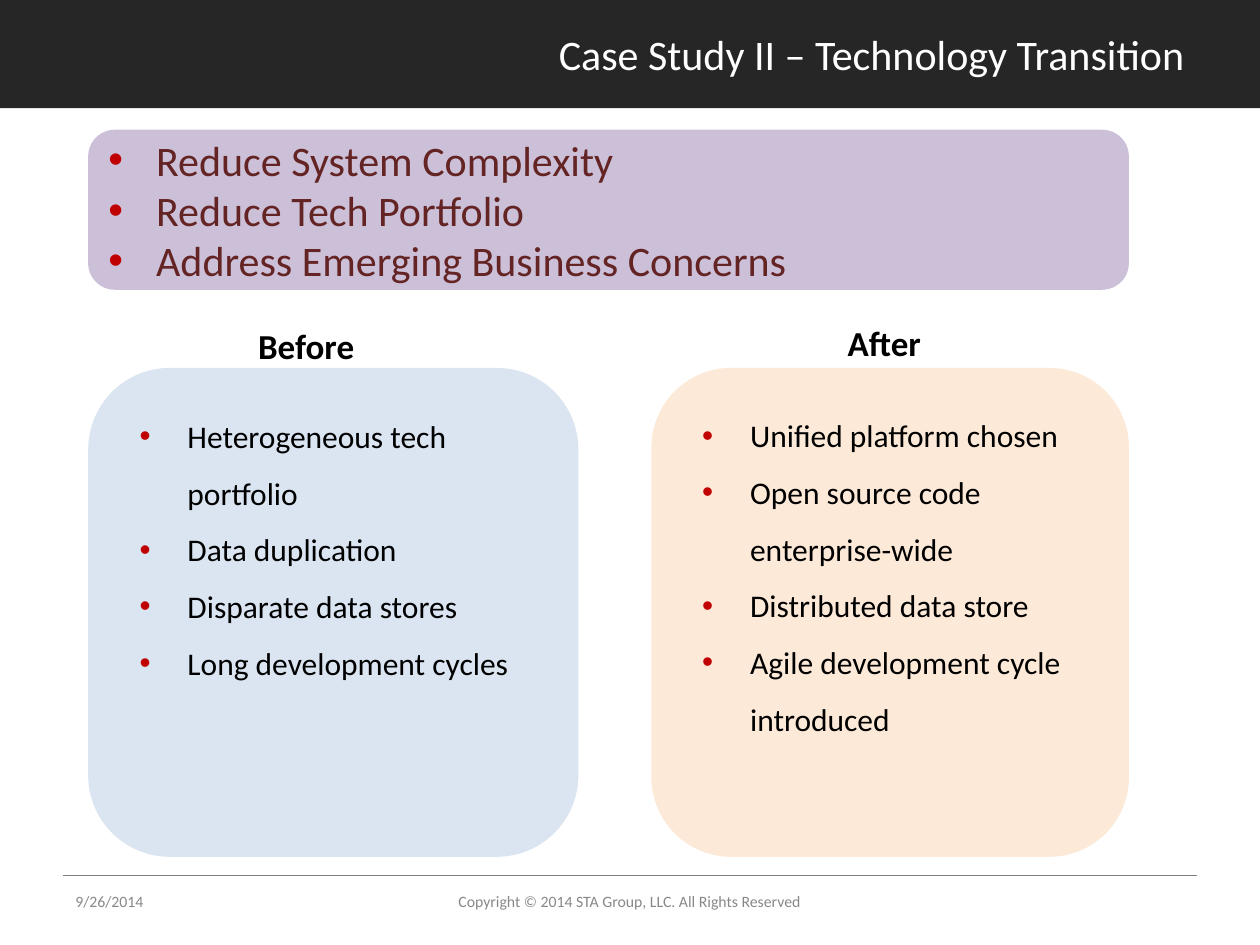
from lxml.etree import SubElement
from pptx import Presentation
from pptx.dml.color import RGBColor
from pptx.enum.shapes import MSO_CONNECTOR, MSO_SHAPE
from pptx.enum.text import MSO_ANCHOR, PP_ALIGN
from pptx.oxml.ns import qn
from pptx.util import Inches, Pt

COLORS = {
    "header": "262626", "rule": "7F7F7F", "footer": "888888",
    "white": "FFFFFF", "black": "000000", "bullet": "C00000",
    "goals": "CCC0D9", "goals_text": "632423",
    "before": "DAE5F1", "after": "FDE9D8",
}
GOALS = ["Reduce System Complexity", "Reduce Tech Portfolio",
         "Address Emerging Business Concerns"]
BEFORE = ["Heterogeneous tech portfolio", "Data duplication",
          "Disparate data stores", "Long development cycles"]
AFTER = ["Unified platform chosen", "Open source code enterprise-wide",
         "Distributed data store", "Agile development cycle introduced"]


def rgb(name):
    return RGBColor.from_string(COLORS[name])


def add_bullet(p, indent):
    pPr = p._p.get_or_add_pPr()
    pPr.set("marL", str(Inches(indent)))
    pPr.set("indent", str(-Inches(0.38)))
    color = SubElement(pPr, qn("a:buClr"))
    SubElement(color, qn("a:srgbClr")).set("val", COLORS["bullet"])
    SubElement(pPr, qn("a:buFont")).set("typeface", "Arial")
    SubElement(pPr, qn("a:buChar")).set("char", "•")


def write(sp, lines, size=18, color="black", bold=False, align=PP_ALIGN.LEFT,
          anchor=MSO_ANCHOR.TOP, indent=None, spacing=None):
    tf = sp.text_frame
    tf.word_wrap = True
    tf.vertical_anchor = anchor
    for i, line in enumerate(lines):
        p = tf.add_paragraph() if i else tf.paragraphs[0]
        if indent is not None:
            add_bullet(p, indent)
        p.alignment = align
        if spacing:
            p.line_spacing = spacing
        r = p.add_run()
        r.text = line
        r.font.name = "Calibri"
        r.font.size = Pt(size)
        r.font.bold = bold
        r.font.color.rgb = rgb(color)


def add_box(s, kind, at, fill):
    sp = s.shapes.add_shape(kind, *map(Inches, at))
    sp.shadow.inherit = False
    sp.fill.solid()
    sp.fill.fore_color.rgb = rgb(fill)
    sp.line.fill.background()
    return sp


def add_label(s, at, text, **fmt):
    write(s.shapes.add_textbox(*map(Inches, at)), [text], **fmt)


def add_panel(s, at, fill, lines, **fmt):
    write(add_box(s, MSO_SHAPE.ROUNDED_RECTANGLE, at, fill), lines, **fmt)


def add_header(s, text):
    title = s.shapes.title
    bar = add_box(s, MSO_SHAPE.RECTANGLE, (0, 0, 10.01, 0.86), "header")
    title.element.addprevious(bar.element)
    title.left, title.top, title.width, title.height = map(
        Inches, (1.97, 0, 7.53, 0.86))
    write(title, [text], size=24, color="white", align=PP_ALIGN.RIGHT,
          anchor=MSO_ANCHOR.MIDDLE)


def add_footer(s):
    y = 6.95
    rule = s.shapes.add_connector(
        MSO_CONNECTOR.STRAIGHT, *map(Inches, (0.5, y, 9.5, y)))
    rule.line.color.rgb = rgb("rule")
    rule.line.width = Pt(0.75)
    SubElement(rule.element.spPr, qn("a:effectLst"))
    fmt = {"size": 9, "color": "footer", "anchor": MSO_ANCHOR.MIDDLE}
    add_label(s, (0.5, y, 2.33, 0.4), "9/26/2014", **fmt)
    add_label(s, (2.83, y, 4.33, 0.4),
              "Copyright © 2014 STA Group, LLC. All Rights Reserved",
              align=PP_ALIGN.CENTER, **fmt)


def main():
    prs = Presentation()
    prs.slide_width, prs.slide_height = Inches(10), Inches(7.5)
    s = prs.slides.add_slide(prs.slide_layouts[5])
    add_header(s, "Case Study II – Technology Transition")
    add_footer(s)
    add_panel(s, (0.7, 1.03, 8.26, 1.27), "goals", GOALS, size=24,
              color="goals_text", anchor=MSO_ANCHOR.MIDDLE, indent=0.38)
    add_panel(s, (0.7, 2.92, 3.89, 3.88), "before", BEFORE,
              indent=0.5, spacing=1.5)
    add_panel(s, (5.17, 2.92, 3.79, 3.88), "after", AFTER,
              indent=0.5, spacing=1.5)
    add_label(s, (1.83, 2.53, 1.2, 0.44), "Before", size=20, bold=True,
              align=PP_ALIGN.CENTER)
    add_label(s, (6.63, 2.5, 0.87, 0.44), "After", size=20, bold=True)
    prs.save("out.pptx")


if __name__ == "__main__":
    main()
